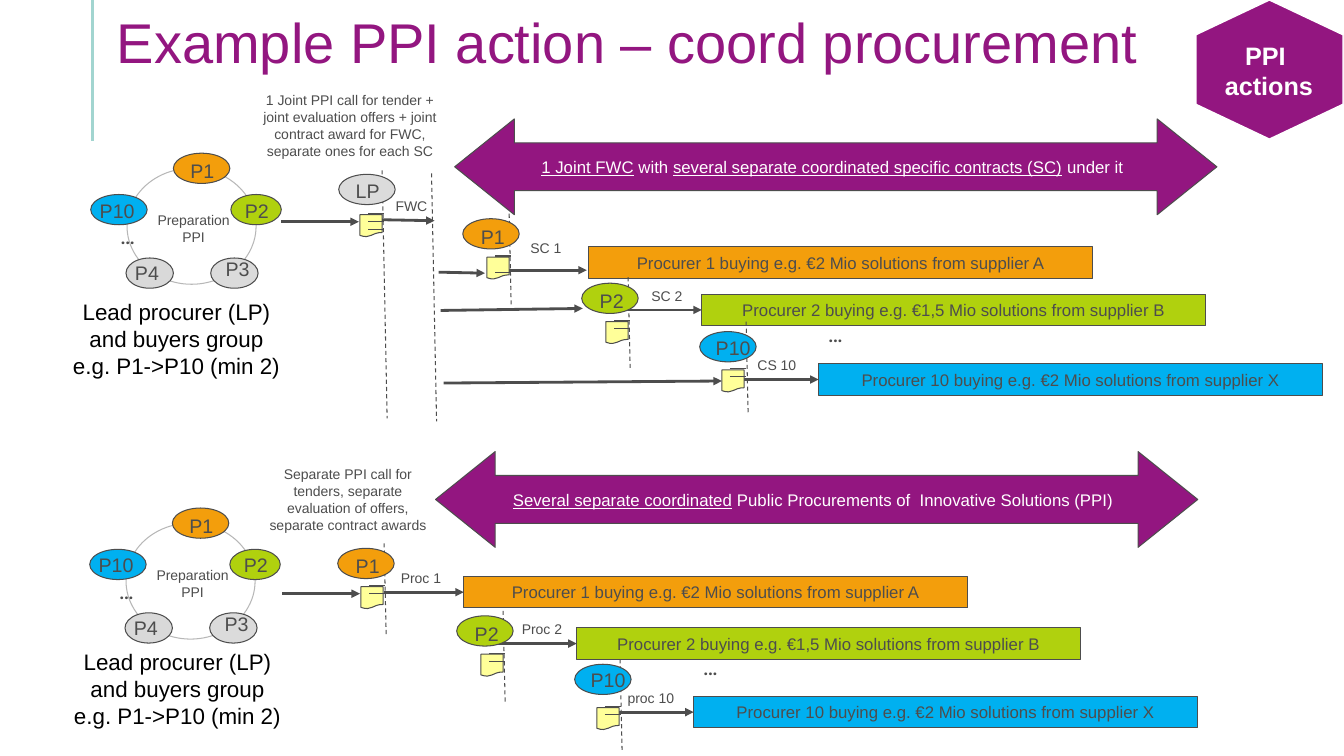
import pptx
import pptx.util
import pptx.dml.color
import pptx.enum.dml
import pptx.enum.shapes
import pptx.enum.text
import pptx.oxml
import pptx.oxml.ns

Inches = pptx.util.Inches
Shapes = pptx.enum.shapes.MSO_SHAPE
Align = pptx.enum.text.PP_ALIGN
Anchor = pptx.enum.text.MSO_ANCHOR
AutoSize = pptx.enum.text.MSO_AUTO_SIZE

COLOURS = {
    "purple": "931680", "grey": "4D4D4D", "orange": "F39E0C", "green": "B0D10E",
    "blue": "00B0F0", "silver": "D9D9D9", "light": "DBDBDB", "note": "FFFF99",
    "mint": "A2D5D0", "white": "FFFFFF", "black": "000000",
}
LABEL_WIDTHS = {"P1": 0.55, "P2": 0.53, "P3": 0.53, "P4": 0.57, "P10": 0.68, "LP": 0.69}
MEMBERS = [
    ("P1", "orange", 0.46, -0.15, 0.56, 0.07, 0.01),
    ("P2", "green", 1.03, 0.26, 0.5, 0.04, -0.01),
    ("P10", "blue", -0.36, 0.26, 0.56, -0.01, -0.01),
    ("P4", "silver", -0.01, 0.89, 0.47, -0.01, -0.02),
    ("P3", "light", 0.83, 0.89, 0.47, 0.05, -0.06),
]
PURCHASES = [
    ("P1", "orange", "Procurer 1 buying e.g. €2 Mio solutions from supplier A"),
    ("P2", "green", "Procurer 2 buying e.g. €1,5 Mio solutions from supplier B"),
    ("P10", "blue", "Procurer 10 buying e.g. €2 Mio solutions from supplier X"),
]


def colour(name):
    return pptx.dml.color.RGBColor.from_string(COLOURS[name])


def write_text(frame, text, size=10, font="Arial", ink="grey", bold=False,
               align=Align.CENTER, spacing=None):
    for number, line in enumerate(text.split("\n")):
        para = frame.add_paragraph() if number else frame.paragraphs[0]
        para.alignment = align
        para.line_spacing = spacing
        for part, words in enumerate(line.split("_")):
            if words:
                span = para.add_run()
                span.text = words
                span.font.size = pptx.util.Pt(size)
                span.font.name = font
                span.font.bold = bold
                span.font.underline = part % 2 == 1
                span.font.color.rgb = colour(ink)


class Page:
    def __init__(self, deck):
        self.page = deck.slides.add_slide(deck.slide_layouts[5])
        self.shapes = self.page.shapes

    def title(self, text, x, y, width, height):
        box = self.shapes.title
        box.left, box.top = Inches(x), Inches(y)
        box.width, box.height = Inches(width), Inches(height)
        frame = box.text_frame
        frame.auto_size = AutoSize.NONE
        frame.word_wrap = True
        frame.vertical_anchor = Anchor.BOTTOM
        frame.margin_bottom = 0
        write_text(frame, text, size=40, ink="purple", align=Align.LEFT, spacing=0.9)

    def text(self, text, x, y, width, height, wrap=True, **style):
        box = self.shapes.add_textbox(Inches(x), Inches(y), Inches(width), Inches(height))
        box.text_frame.word_wrap = wrap
        box.text_frame.auto_size = AutoSize.SHAPE_TO_FIT_TEXT
        write_text(box.text_frame, text, **style)

    def shape(self, kind, x, y, width, height, fill=None, edge="grey", weight=0.75):
        shape = self.shapes.add_shape(kind, Inches(x), Inches(y), Inches(width), Inches(height))
        shape.shadow.inherit = False
        if fill:
            shape.fill.solid()
            shape.fill.fore_color.rgb = colour(fill)
        else:
            shape.fill.background()
        shape.line.color.rgb = colour(edge)
        shape.line.width = pptx.util.Pt(weight)
        return shape

    def line(self, x1, y1, x2, y2, ink="grey", weight=0.75, dashed=False, arrow=False):
        line = self.shapes.add_connector(
            pptx.enum.shapes.MSO_CONNECTOR.STRAIGHT, Inches(x1), Inches(y1), Inches(x2), Inches(y2))
        line.line.color.rgb = colour(ink)
        line.line.width = pptx.util.Pt(weight)
        if dashed:
            line.line.dash_style = pptx.enum.dml.MSO_LINE.DASH
        if arrow:
            head = pptx.oxml.ns.qn("a:tailEnd")
            line.line._get_or_add_ln().append(line._element.makeelement(head, {"type": "triangle"}))
        line._element.spPr.append(line._element.makeelement(pptx.oxml.ns.qn("a:effectLst"), {}))
        return line

    def arrow(self, x1, y1, x2, y2):
        return self.line(x1, y1, x2, y2, weight=2, arrow=True)

    def bubble(self, name, fill, x, y, width=0.56, shift_x=0.08, shift_y=0.01):
        self.shape(Shapes.OVAL, x, y, width, 0.3, fill)
        self.text(name, x + shift_x, y + shift_y, LABEL_WIDTHS[name], 0.34,
                  size=14, align=Align.LEFT)

    def dots(self, x, y):
        self.text("…", x, y, 0.39, 0.4, wrap=False, size=18, font="Karla")

    def document(self, x, y, rules=(-0.01, 0.07)):
        self.shape(Shapes.FLOWCHART_DOCUMENT, x, y, 0.22, 0.22, "note")
        for rule in rules:
            self.line(x + 0.08, y + rule, x + 0.24, y + rule)

    def divider(self, x, y, height=0.9, lean=0.02):
        self.line(x, y, x + lean, y + height, dashed=True)

    def banner(self, text, x, y):
        shape = self.shape(Shapes.LEFT_RIGHT_ARROW, x, y, 7.56, 0.95, "purple")
        shape.adjustments[0], shape.adjustments[1] = 0.5, 0.623
        self.text(text, x + 0.13, y + 0.33, 7.23, 0.3, size=12, ink="white")

    def group(self, x, y, caption_x, caption_y):
        ring = self.shape(Shapes.OVAL, x, y, 1.28, 1.15)
        shade = ring.line._get_or_add_ln().find(".//" + pptx.oxml.ns.qn("a:srgbClr"))
        shade.append(shade.makeelement(pptx.oxml.ns.qn("a:alpha"), {"val": "40000"}))
        self.text("Preparation\nPPI", x + 0.12, y + 0.38, 1.08, 0.44)
        for name, fill, dx, dy, width, shift_x, shift_y in MEMBERS:
            self.bubble(name, fill, x + dx, y + dy, width, shift_x, shift_y)
        self.dots(x - 0.19, y + 0.46)
        self.text("Lead procurer (LP) and buyers group\ne.g. P1->P10 (min 2)",
                  caption_x, caption_y, 2.36, 0.91, size=16, ink="black")

    def purchase(self, buyer, step, bar_at, label_at, bubble_at, document_at, divider_at,
                 arrow_drop=0.155, rules=(-0.01, 0.07)):
        name, fill, text = buyer
        x, y = bar_at
        bar = self.shape(Shapes.RECTANGLE, x, y, 5, 0.31, fill)
        bar.text_frame.word_wrap = False
        bar.text_frame.vertical_anchor = Anchor.MIDDLE
        write_text(bar.text_frame, text, size=12)
        arrow = self.arrow(x - 0.79, y + arrow_drop, x - 0.02, y + arrow_drop)
        if arrow_drop == 0.155:
            arrow.end_connect(bar, 1)
        self.text(step, *label_at, 0.73, 0.27)
        self.document(*document_at, rules)
        self.divider(*divider_at)
        self.bubble(name, fill, *bubble_at, shift_y=-0.01 if name == "P10" else 0.01,
                    shift_x=0.06 if name == "P10" else 0.08)


def draw_joint(page):
    page.group(1.26, 1.67, 0.57, 2.91)
    page.text("1 Joint PPI call for tender + joint evaluation offers + joint contract award "
              "for FWC, separate ones for each SC", 2.47, 0.86, 2, 0.77)
    page.arrow(2.79, 2.2, 3.56, 2.2)
    page.document(3.57, 2.13, (-0.01, 0.07, 0.15))
    page.divider(3.79, 1.69, 2.46, 0.05)
    page.divider(4.28, 1.72, 2.46, 0.05)
    page.arrow(3.79, 2.18, 4.31, 2.19)
    page.text("FWC", 3.79, 1.91, 0.58, 0.27)
    page.bubble("LP", "light", 3.36, 1.73, shift_x=0.07, shift_y=0)
    page.purchase(PURCHASES[0], "SC 1", (5.84, 2.45), (5.05, 2.33), (4.59, 2.17),
                  (4.83, 2.55), (5.05, 2.12), arrow_drop=0.23, rules=(-0.01, 0.15))
    page.purchase(PURCHASES[1], "SC 2", (6.96, 2.92), (6.25, 2.8), (5.77, 2.81),
                  (6.01, 3.19), (6.23, 2.75))
    page.purchase(PURCHASES[2], "CS 10", (8.12, 3.61), (7.34, 3.49), (6.94, 3.29),
                  (7.16, 3.67), (7.4, 3.19))
    page.arrow(4.35, 2.7, 4.81, 2.71)
    page.arrow(4.37, 3.08, 5.78, 3.06)
    page.arrow(4.4, 3.8, 7.16, 3.78)
    page.dots(8.09, 3.1)
    page.banner("_1 Joint FWC_ with _several separate coordinated specific contracts (SC)_ under it",
                4.51, 1.18)


def draw_separate(page):
    page.banner("_Several separate coordinated_ Public Procurements of  Innovative Solutions (PPI)",
                4.32, 4.48)
    page.group(1.25, 5.19, 0.58, 6.38)
    page.text("Separate PPI call for tenders, separate evaluation of offers, "
              "separate contract awards", 2.53, 4.57, 1.84, 0.77)
    page.arrow(2.8, 5.89, 3.57, 5.89)
    page.purchase(PURCHASES[0], "Proc 1", (4.6, 5.72), (3.81, 5.6), (3.35, 5.44),
                  (3.58, 5.82), (3.81, 5.39))
    page.purchase(PURCHASES[1], "Proc 2", (5.72, 6.23), (5.01, 6.11), (4.53, 6.11),
                  (4.77, 6.49), (4.99, 6.06))
    page.purchase(PURCHASES[2], "proc 10", (6.88, 6.91), (6.09, 6.79), (5.7, 6.59),
                  (5.92, 7.02), (6.15, 6.54))
    page.dots(6.85, 6.4)


def main():
    deck = pptx.Presentation()
    deck.slide_width, deck.slide_height = Inches(13.33), Inches(7.5)
    page = Page(deck)
    page.line(0.92, 0, 0.92, 1.4, ink="mint", weight=2.25)
    page.title("Example PPI action – coord procurement", 1.06, -0.11, 12.09, 0.86)
    draw_separate(page)
    badge = page.shape(Shapes.HEXAGON, 11.9, -0.04, 1.38, 1.46, "purple", "white", 1)
    badge.rotation = 90
    page.text("PPI \nactions", 11.52, 0.35, 2.13, 0.71, size=18, ink="white", bold=True)
    draw_joint(page)
    deck.save("out.pptx")


if __name__ == "__main__":
    main()
